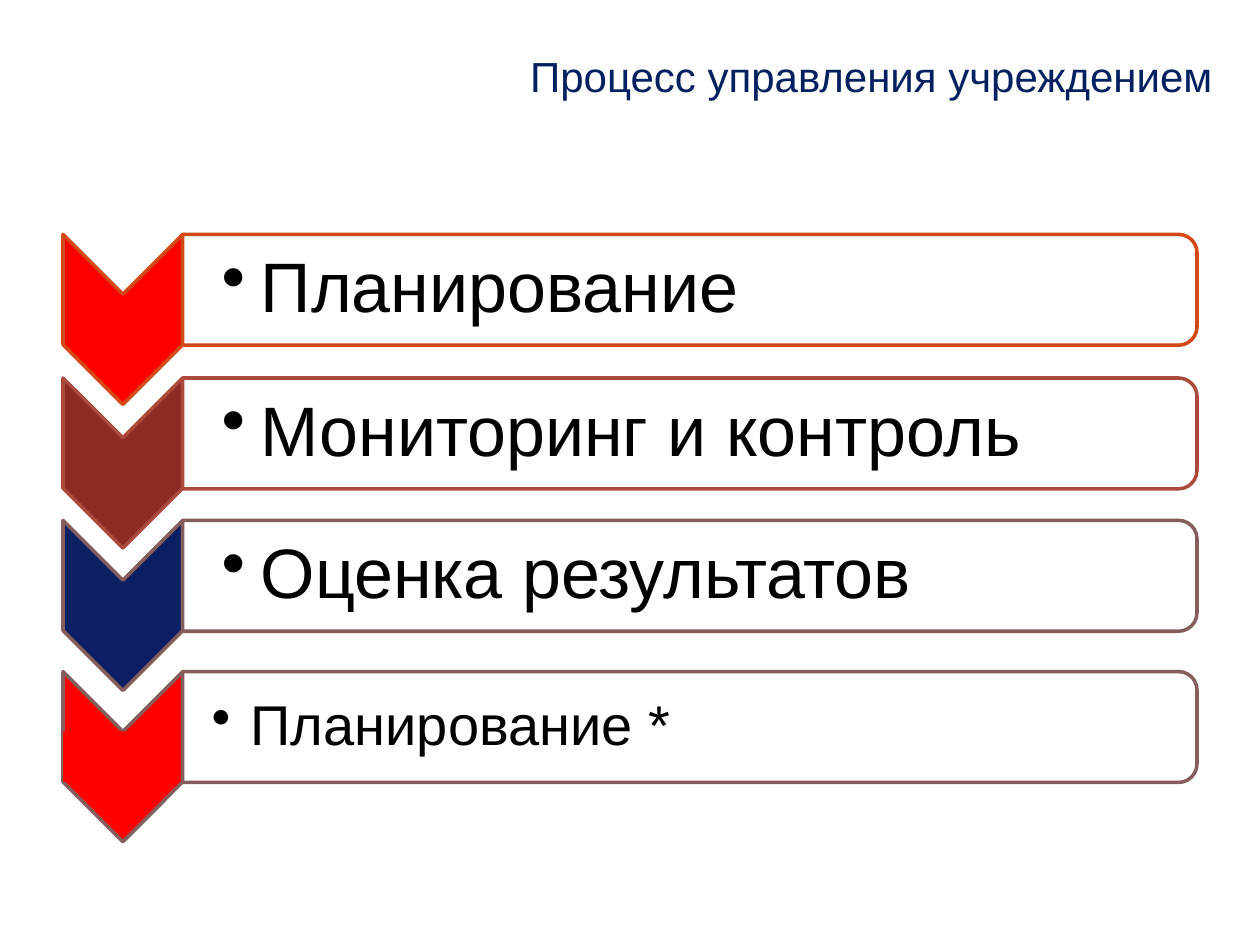
from lxml import etree
from pptx import Presentation
from pptx.dml.color import RGBColor
from pptx.enum import shapes, text
from pptx.oxml import ns
from pptx.util import Inches, Pt

NAVY = RGBColor(0x00, 0x20, 0x60)
DEEP_BLUE = RGBColor(0x0B, 0x1F, 0x62)
RED = RGBColor(0xFF, 0x00, 0x00)
BRICK = RGBColor(0x8B, 0x2B, 0x21)
ORANGE_EDGE = RGBColor(0xD3, 0x48, 0x17)
BRICK_EDGE = RGBColor(0xAB, 0x49, 0x3B)
MAUVE_EDGE = RGBColor(0x85, 0x5D, 0x5D)
WHITE = RGBColor(0xFF, 0xFF, 0xFF)
BLACK = RGBColor(0x00, 0x00, 0x00)

# Stage name, text size, left inset, row top, chevron fill, outline
STAGES = [
    ("Планирование", 40, 0.31, 1.86, RED, ORANGE_EDGE),
    ("Мониторинг и контроль", 40, 0.31, 3.0, BRICK, BRICK_EDGE),
    ("Оценка результатов", 40, 0.31, 4.13, DEEP_BLUE, MAUVE_EDGE),
    ("Планирование *", 32, 0.23, 5.33, RED, MAUVE_EDGE),
]
ROW_LEFT, ROW_WIDTH = 0.5, 9.0
CHEVRON_WIDTH, CHEVRON_HEIGHT = 0.95, 1.35
PANEL_HEIGHT = 0.88


def add_text(slide, content, left, top, width, height, *, size, color,
             align=text.PP_ALIGN.LEFT, insets=(0.1, 0.05, 0.1, 0.05),
             bullet_indent=None, line_spacing=None):
    box = slide.shapes.add_textbox(Inches(left), Inches(top),
                                   Inches(width), Inches(height))
    frame = box.text_frame
    frame.word_wrap = True
    frame.vertical_anchor = text.MSO_ANCHOR.MIDDLE
    (frame.margin_left, frame.margin_top,
     frame.margin_right, frame.margin_bottom) = map(Inches, insets)
    paragraph = frame.paragraphs[0]
    paragraph.alignment = align
    if line_spacing:
        paragraph.line_spacing = line_spacing
    if bullet_indent:
        props = paragraph._p.get_or_add_pPr()
        props.set("marL", str(Inches(bullet_indent)))
        props.set("indent", str(-Inches(bullet_indent)))
        etree.SubElement(props, ns.qn("a:buChar")).set("char", "•")
    run = paragraph.add_run()
    run.text = content
    run.font.name = "Arial"
    run.font.size = Pt(size)
    run.font.color.rgb = color


def add_block(slide, kind, left, top, width, height, fill, edge=None,
              turned=False):
    """Fill the given box; a turned block is rotated a quarter clockwise."""
    if turned:
        left, top = left + (width - height) / 2, top + (height - width) / 2
        width, height = height, width
    block = slide.shapes.add_shape(kind, Inches(left), Inches(top),
                                   Inches(width), Inches(height))
    block.rotation = 90 if turned else 0
    block.shadow.inherit = False
    block.fill.solid()
    block.fill.fore_color.rgb = fill
    if edge is None:
        block.line.fill.background()
    else:
        block.line.color.rgb = edge
        block.line.width = Pt(2)
    return block


def add_stage(slide, left, top, width, name, size, inset, fill, edge,
              cover=False):
    # Downward chevron
    chevron = add_block(slide, shapes.MSO_SHAPE.CHEVRON, left, top,
                        CHEVRON_WIDTH, CHEVRON_HEIGHT, fill, edge, turned=True)
    chevron.adjustments[0] = 0.5
    if cover:
        # Plain band across the chevron's middle
        add_block(slide, shapes.MSO_SHAPE.RECTANGLE, left,
                  top + CHEVRON_WIDTH / 2, CHEVRON_WIDTH,
                  CHEVRON_HEIGHT - CHEVRON_WIDTH, fill)
    # Panel with rounded right corners, and its label
    panel_left = left + CHEVRON_WIDTH
    panel_width = width - CHEVRON_WIDTH
    add_block(slide, shapes.MSO_SHAPE.ROUND_2_SAME_RECTANGLE, panel_left, top,
              panel_width, PANEL_HEIGHT, WHITE, edge, turned=True)
    add_text(slide, name, panel_left, top + 0.04, panel_width - 0.04,
             PANEL_HEIGHT - 0.08, size=size, color=BLACK,
             insets=(inset, 0.03, 0.03, 0.03), bullet_indent=0.31,
             line_spacing=0.9)


def main():
    deck = Presentation()
    deck.slide_width, deck.slide_height = Inches(10), Inches(7.5)
    slide = deck.slides.add_slide(deck.slide_layouts[6])

    # Title
    add_text(slide, "Процесс управления учреждением", 2.07, 0.13, 7.65, 0.94,
             size=24, color=NAVY, align=text.PP_ALIGN.RIGHT)

    # Stages of the process
    for name, size, inset, top, fill, edge in STAGES:
        add_stage(slide, ROW_LEFT, top, ROW_WIDTH, name, size, inset, fill,
                  edge, cover=name.endswith("*"))

    deck.save("out.pptx")


if __name__ == "__main__":
    main()
